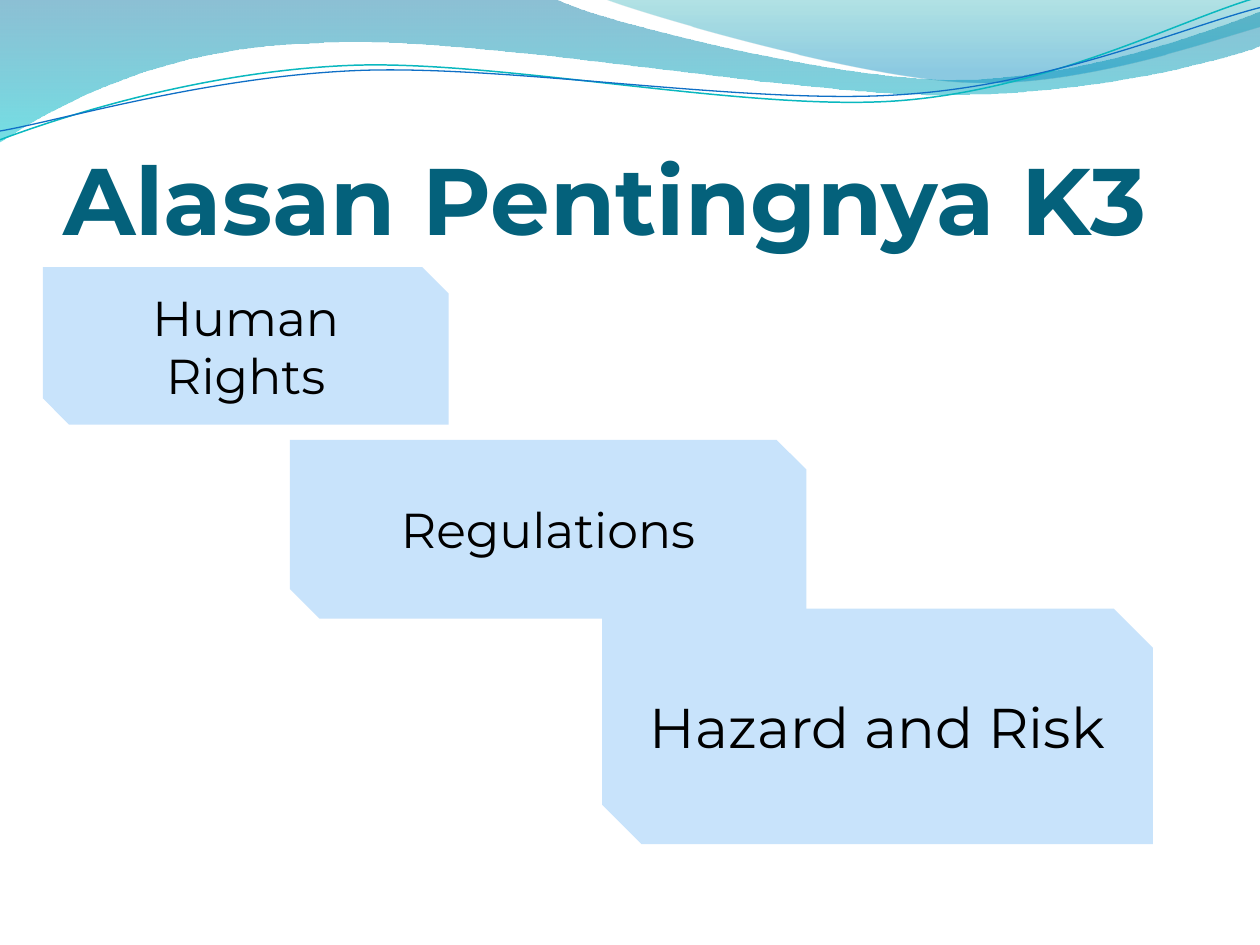
from math import cos, radians, sin

from lxml import etree
from pptx import Presentation
from pptx.dml.color import RGBColor
from pptx.enum.shapes import MSO_SHAPE
from pptx.enum.text import MSO_ANCHOR, MSO_AUTO_SIZE, PP_ALIGN
from pptx.oxml.ns import qn
from pptx.util import Inches, Pt

SNIPPED_BOX = MSO_SHAPE.SNIP_2_DIAG_RECTANGLE
BOTTOM, MIDDLE = MSO_ANCHOR.BOTTOM, MSO_ANCHOR.MIDDLE
LEFT, CENTER = PP_ALIGN.LEFT, PP_ALIGN.CENTER
NO_AUTOFIT = MSO_AUTO_SIZE.NONE

FONT = "Montserrat"
TITLE_COLOR = RGBColor(0x04, 0x61, 0x7B)
BOX_COLOR = RGBColor(0xC8, 0xE3, 0xFB)
BLACK = RGBColor(0, 0, 0)
DEEP_BLUE = RGBColor(0x00, 0x74, 0xA1)
TURQUOISE = RGBColor(0x00, 0xC6, 0xCF)
TEAL = RGBColor(0x00, 0xA1, 0xA9)
SKY_BLUE = RGBColor(0x00, 0x8B, 0xBF)
TEAL_LINE = RGBColor(0x0A, 0xB8, 0xBF)
BLUE_LINE = RGBColor(0x0F, 0x6F, 0xC6)
STROKE_TILT = 357.3

# Each wave has a box and a list of segments: two numbers draw a straight
# line, six numbers draw a Bezier curve (two controls and an end).
# Bands carry gradient stops of position, colour and opacity percent.
BANDS = [
    ((-0.01, -0.01, 10.02, 1.14),
     [(0, 0), (4.4, -0.01),
      (4.76, 0.17, 6.64, 0.63, 7.58, 0.63),
      (8.53, 0.63, 9.58, 0.26, 10, 0.09),
      (10.01, 0.36),
      (9.83, 0.44, 8.7, 0.76, 7.46, 0.75),
      (6.22, 0.75, 3.82, 0.28, 2.57, 0.34),
      (1.29, 0.36, 0.46, 0.83, -0.01, 1.13),
      (0, 0)],
     [(0, DEEP_BLUE, 45), (1, TURQUOISE, 55)]),
    ((4.79, -0.01, 5.21, 0.7),
     [(4.79, -0.01),
      (5.09, 0.11, 6.82, 0.62, 7.69, 0.65),
      (8.56, 0.69, 9.61, 0.32, 10, 0.21),
      (10, 0), (4.79, -0.01)],
     [(0, TEAL, 30), (0.8, SKY_BLUE, 45)]),
]
STROKES = [
    ((-0.02, 0.22, 10.02, 0.71),
     [(0, 1.11),
      (0.48, 0.93, 1.58, 0.57, 2.77, 0.52),
      (3.95, 0.47, 5.93, 0.89, 7.13, 0.8),
      (8.33, 0.71, 9.38, 0.15, 9.98, -0.02)], TEAL_LINE, 0.85),
    ((-0.02, 0.3, 10.03, 0.58),
     [(0, 1.04),
      (0.47, 0.96, 1.64, 0.61, 2.83, 0.56),
      (4.03, 0.51, 5.97, 0.84, 7.17, 0.75),
      (8.36, 0.67, 9.41, 0.21, 10, 0.06)], BLUE_LINE, 0.75),
]
REASONS = [
    ("Human Rights", 0.34, 2.12, 3.22, 1.25, 28),
    ("Regulations", 2.3, 3.49, 4.1, 1.42, 28),
    ("Hazard and Risk", 4.78, 4.83, 4.37, 1.87, 32),
]


def to_local(x, y, box, rotation):
    """Turn a slide point back by the rotation and measure it from the box corner."""
    left, top, width, height = box
    dx, dy = x - left - width / 2, y - top - height / 2
    angle = radians(-rotation)
    return (dx * cos(angle) - dy * sin(angle) + width / 2,
            dx * sin(angle) + dy * cos(angle) + height / 2)


def add_wave(slide, box, segments, closed, rotation=0):
    corners = [(Inches(s[-2]), Inches(s[-1])) for s in segments]
    builder = slide.shapes.build_freeform(*corners[0])
    builder.add_line_segments(corners[1:], close=closed)
    wave = builder.convert_to_shape()
    wave.left, wave.top, wave.width, wave.height = map(Inches, box)
    wave.rotation = rotation
    wave.shadow.inherit = False

    # Redraw the outline with true Bezier curves
    outline = next(wave._element.iter(qn("a:path")))
    outline.clear()
    outline.set("w", str(wave.width))
    outline.set("h", str(wave.height))
    for index, segment in enumerate(segments):
        tag = "a:cubicBezTo" if len(segment) == 6 else "a:lnTo"
        step = etree.SubElement(outline, qn(tag if index else "a:moveTo"))
        for x, y in zip(segment[::2], segment[1::2]):
            x, y = to_local(x, y, box, rotation)
            etree.SubElement(step, qn("a:pt"), x=str(Inches(x)), y=str(Inches(y)))
    if closed:
        etree.SubElement(outline, qn("a:close"))
    return wave


def add_band(slide, box, segments, stops):
    band = add_wave(slide, box, segments, closed=True)
    band.line.fill.background()
    band.fill.gradient()
    band.fill.gradient_angle = 270
    for stop, (position, color, opacity) in zip(band.fill.gradient_stops, stops):
        stop.position = position
        stop.color.rgb = color
        color_element = stop._gs.find(qn("a:srgbClr"))
        etree.SubElement(color_element, qn("a:alpha"), val=str(opacity * 1000))


def add_stroke(slide, box, segments, color, width):
    stroke = add_wave(slide, box, segments, closed=False, rotation=STROKE_TILT)
    stroke.fill.background()
    stroke.line.color.rgb = color
    stroke.line.width = Pt(width)


def set_text(shape, text, size, color, align, anchor, bold=False):
    frame = shape.text_frame
    frame.text = text
    frame.word_wrap = True
    frame.auto_size = NO_AUTOFIT
    frame.vertical_anchor = anchor
    paragraph = frame.paragraphs[0]
    paragraph.alignment = align
    font = paragraph.runs[0].font
    font.name, font.size, font.bold = FONT, Pt(size), bold
    font.color.rgb = color


def set_title(slide, text):
    title = slide.shapes.title
    title.left, title.top = Inches(0.5), Inches(0.77)
    title.width, title.height = Inches(9), Inches(1.25)
    set_text(title, text, 54, TITLE_COLOR, LEFT, BOTTOM, bold=True)
    frame = title.text_frame
    frame.margin_left = frame.margin_right = frame.margin_bottom = 0
    frame.margin_top = Inches(0.05)
    # Bring the title in front of the waves
    title._element.getparent().append(title._element)


def add_reason(slide, text, left, top, width, height, size):
    box = slide.shapes.add_shape(
        SNIPPED_BOX, Inches(left), Inches(top), Inches(width), Inches(height))
    box.shadow.inherit = False
    box.fill.solid()
    box.fill.fore_color.rgb = BOX_COLOR
    box.line.fill.background()
    set_text(box, text, size, BLACK, CENTER, MIDDLE)


def main():
    prs = Presentation()
    prs.slide_width, prs.slide_height = Inches(10), Inches(7.5)
    slide = prs.slides.add_slide(prs.slide_layouts.get_by_name("Title Only"))
    for band in BANDS:
        add_band(slide, *band)
    for stroke in STROKES:
        add_stroke(slide, *stroke)
    set_title(slide, "Alasan Pentingnya K3")
    for reason in REASONS:
        add_reason(slide, *reason)
    prs.save("out.pptx")


if __name__ == "__main__":
    main()
